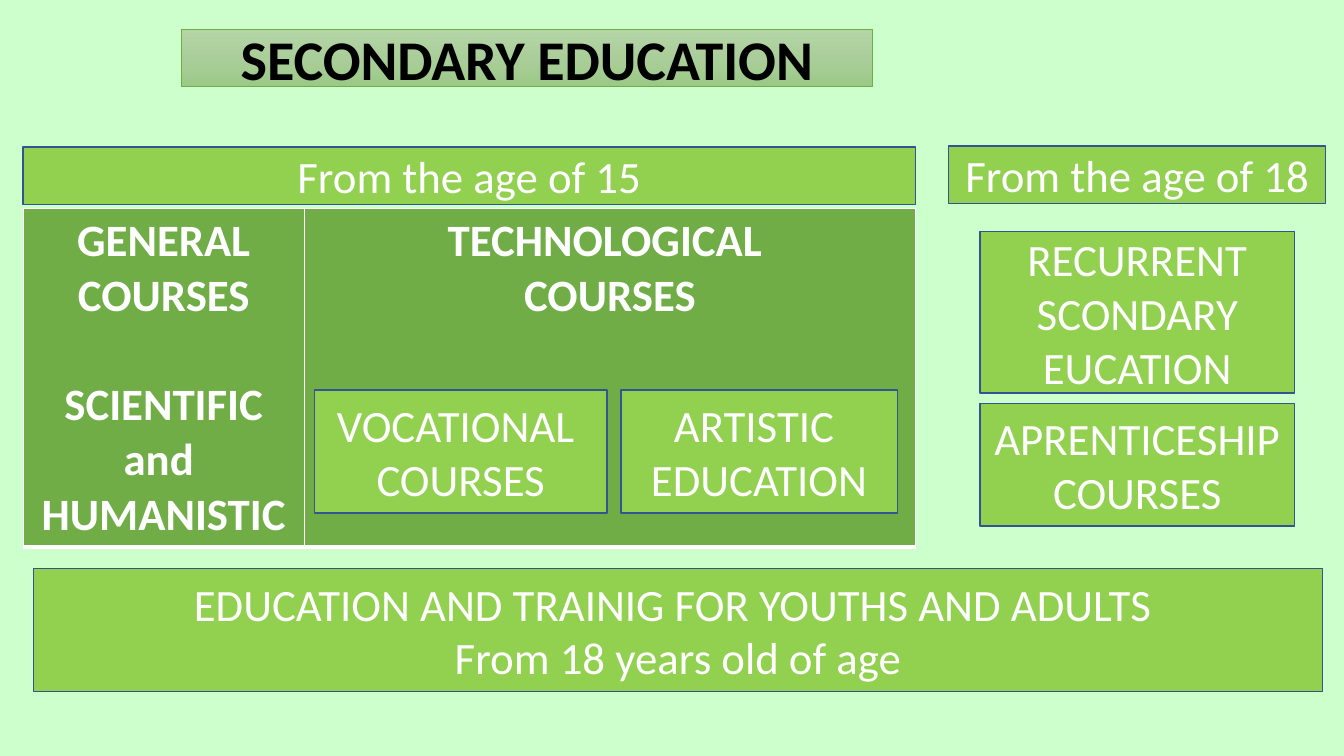
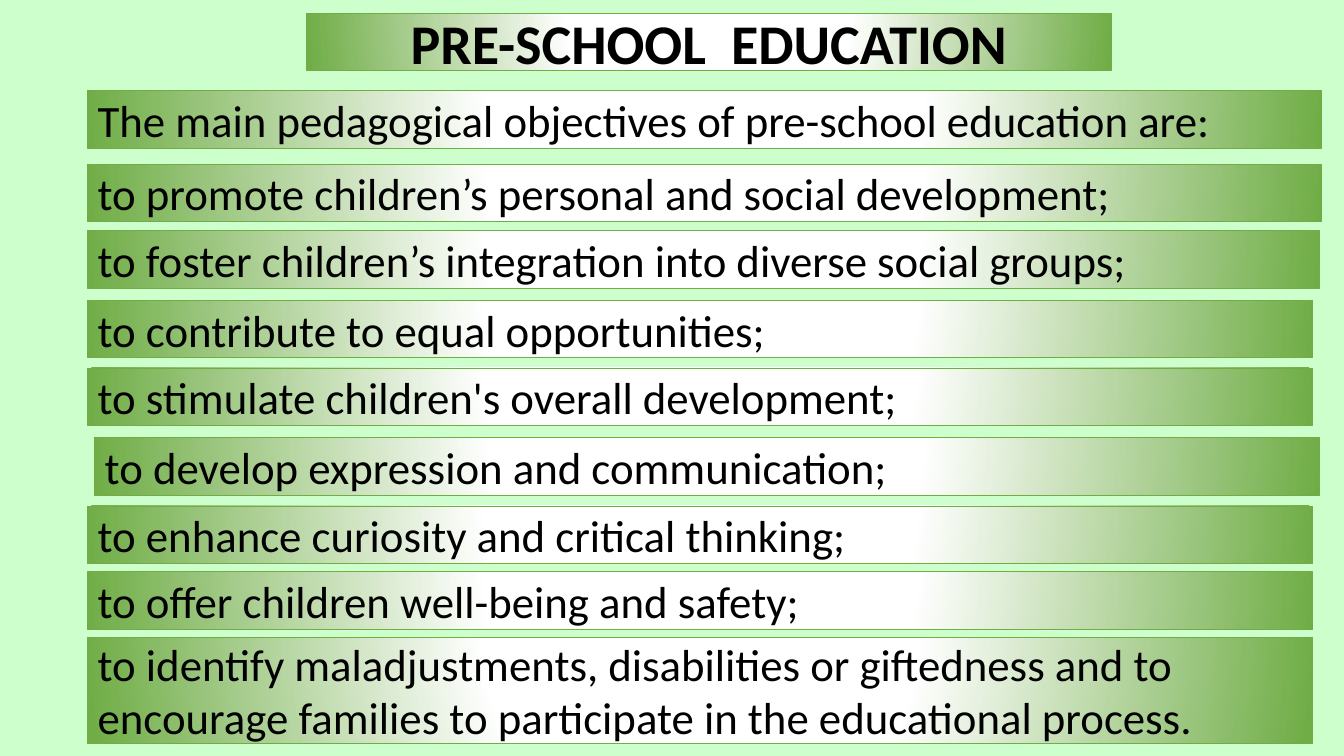
from lxml.etree import SubElement
from pptx import Presentation
from pptx.dml.color import RGBColor
from pptx.enum.shapes import MSO_SHAPE
from pptx.enum.text import MSO_ANCHOR, PP_ALIGN
from pptx.oxml.ns import qn
from pptx.util import Inches, Pt

FONT = "Calibri"
MINT = RGBColor(0xCC, 0xFF, 0xCC)
GREEN = RGBColor(0x70, 0xAD, 0x47)
LIME = RGBColor(0x92, 0xD0, 0x50)
NAVY = RGBColor(0x32, 0x54, 0x91)
WHITE = RGBColor(0xFF, 0xFF, 0xFF)
BLACK = RGBColor(0, 0, 0)

BAR_H = 0.57
BOX_H = 1.22

# Gradient stops as (percent, colour)
SOFT_STOPS = [(0, "B5D5A7"), (50, "AACE9A"), (100, "9CC987")]
GLOW_STOPS = [(0, WHITE), (35, WHITE), (100, GREEN)]

SECONDARY_TITLE = "SECONDARY EDUCATION"
COURSE_TABLE = (0.23, 2.07, 8.85, 3.34)
COURSE_COLUMNS = [
    (2.79, ["GENERAL COURSES", "SCIENTIFIC and ", "HUMANISTIC"]),
    (6.06, ["TECHNOLOGICAL ", "COURSES"]),
]
GROUP_GAP = Pt(39)  # one line between the general courses and their branches
COURSE_BOXES = [
    ((3.12, 3.87, 2.9, BOX_H), ["VOCATIONAL ", "COURSES"]),
    ((6.16, 3.87, 2.74, BOX_H), ["ARTISTIC ", "EDUCATION"]),
    ((9.72, 2.3, 3.12, 1.6), ["RECURRENT SCONDARY EUCATION"]),
    ((9.72, 4, 3.12, BOX_H), ["APRENTICESHIP", "COURSES"]),
    ((0.33, 5.64, 12.79, BOX_H),
     ["EDUCATION AND TRAINIG FOR YOUTHS AND ADULTS ", "From 18 years old of age"]),
    ((0.23, 1.46, 8.85, BAR_H), ["From the age of 15"]),
    ((9.41, 1.45, 3.74, BAR_H), ["From the age of 18"]),
]

PRESCHOOL_TITLE = "PRE-SCHOOL  EDUCATION"
OBJECTIVES = [
    ((0.87, 0.9, 12.24, BAR_H),
     "The main pedagogical objectives of pre-school education are:"),
    ((0.87, 1.63, 12.24, BAR_H), "to promote children’s personal and social development;"),
    ((0.87, 2.29, 12.22, BAR_H),
     "to foster children’s integration into diverse social groups;"),
    ((0.87, 2.98, 12.15, BAR_H), "to contribute to equal opportunities;"),
    ((0.87, 3.65, 12.15, BAR_H), "to stimulate children's overall development;"),
    ((0.94, 4.34, 12.15, BAR_H), "to develop expression and communication;"),
    ((0.87, 5.02, 12.15, BAR_H), "to enhance curiosity and critical thinking;"),
    ((0.87, 5.67, 12.15, BAR_H), "to offer children well-being and safety;"),
    ((0.87, 6.32, 12.15, 1.05),
     "to identify maladjustments, disabilities or giftedness and to encourage "
     "families to participate in the educational process."),
]


def add_slide(prs):
    slide = prs.slides.add_slide(prs.slide_layouts[6])
    slide.background.fill.solid()
    slide.background.fill.fore_color.rgb = MINT
    return slide


def write(tf, lines, color, size=32, bold=False, align=PP_ALIGN.CENTER):
    for i, line in enumerate(lines):
        p = tf.paragraphs[0] if i == 0 else tf.add_paragraph()
        p.text = line
        p.alignment = align
        p.font.name = FONT
        p.font.size = Pt(size)
        p.font.bold = bold
        p.font.color.rgb = color


def add_rect(slide, at, line, weight):
    sp = slide.shapes.add_shape(MSO_SHAPE.RECTANGLE, *map(Inches, at))
    sp.shadow.inherit = False
    sp.line.color.rgb = line
    sp.line.width = Pt(weight)
    sp.text_frame.word_wrap = True
    sp.text_frame.vertical_anchor = MSO_ANCHOR.MIDDLE
    return sp


def add_gradient(sp, stops):
    """Give the shape a gradient fill and return it, still without a direction."""
    sp_pr = sp._element.spPr
    grad = SubElement(sp_pr, qn("a:gradFill"), rotWithShape="1")
    sp_pr.find(qn("a:prstGeom")).addnext(grad)
    stop_list = SubElement(grad, qn("a:gsLst"))
    for percent, color in stops:
        gs = SubElement(stop_list, qn("a:gs"), pos=str(percent * 1000))
        SubElement(gs, qn("a:srgbClr"), val=str(color))
    return grad


def add_soft_bar(slide, at):
    sp = add_rect(slide, at, GREEN, 0.5)
    SubElement(add_gradient(sp, SOFT_STOPS), qn("a:lin"), ang="5400000", scaled="0")
    return sp


def add_glow_bar(slide, at):
    """Add a bar that is white in the middle and green at both ends."""
    sp = add_rect(slide, at, GREEN, 0.5)
    circle = SubElement(add_gradient(sp, GLOW_STOPS), qn("a:path"), path="circle")
    SubElement(circle, qn("a:fillToRect"), l="50000", t="-80000", r="50000", b="180000")
    return sp


def style_cell(cell):
    tc_pr = cell._tc.get_or_add_tcPr()
    for side, weight in (("L", 1), ("R", 1), ("T", 1), ("B", 3)):
        ln = SubElement(tc_pr, qn(f"a:ln{side}"), w=str(Pt(weight)))
        fill = SubElement(ln, qn("a:solidFill"))
        SubElement(fill, qn("a:srgbClr"), val=str(WHITE))
    cell.fill.solid()
    cell.fill.fore_color.rgb = GREEN


def add_course_table(slide):
    table = slide.shapes.add_table(
        1, len(COURSE_COLUMNS), *map(Inches, COURSE_TABLE)).table
    for i, (width, lines) in enumerate(COURSE_COLUMNS):
        table.columns[i].width = Inches(width)
        cell = table.cell(0, i)
        style_cell(cell)
        write(cell.text_frame, lines, WHITE, bold=True)
    table.cell(0, 0).text_frame.paragraphs[1].space_before = GROUP_GAP


def build_secondary(prs):
    slide = add_slide(prs)
    title = add_soft_bar(slide, (1.8, 0.29, 6.85, BAR_H))
    write(title.text_frame, [SECONDARY_TITLE], BLACK, 40, True)
    add_course_table(slide)
    for at, lines in COURSE_BOXES:
        box = add_rect(slide, at, NAVY, 1)
        box.fill.solid()
        box.fill.fore_color.rgb = LIME
        write(box.text_frame, lines, WHITE)


def build_preschool(prs):
    slide = add_slide(prs)
    title = add_glow_bar(slide, (3.04, 0.13, 7.98, BAR_H))
    write(title.text_frame, [PRESCHOOL_TITLE], BLACK, 40, True)
    for at, text in OBJECTIVES:
        bar = add_glow_bar(slide, at)
        write(bar.text_frame, [text], BLACK, align=PP_ALIGN.LEFT)


def main():
    prs = Presentation()
    prs.slide_width = Inches(13.33)
    prs.slide_height = Inches(7.5)
    build_secondary(prs)
    build_preschool(prs)
    prs.save("out.pptx")


if __name__ == "__main__":
    main()
